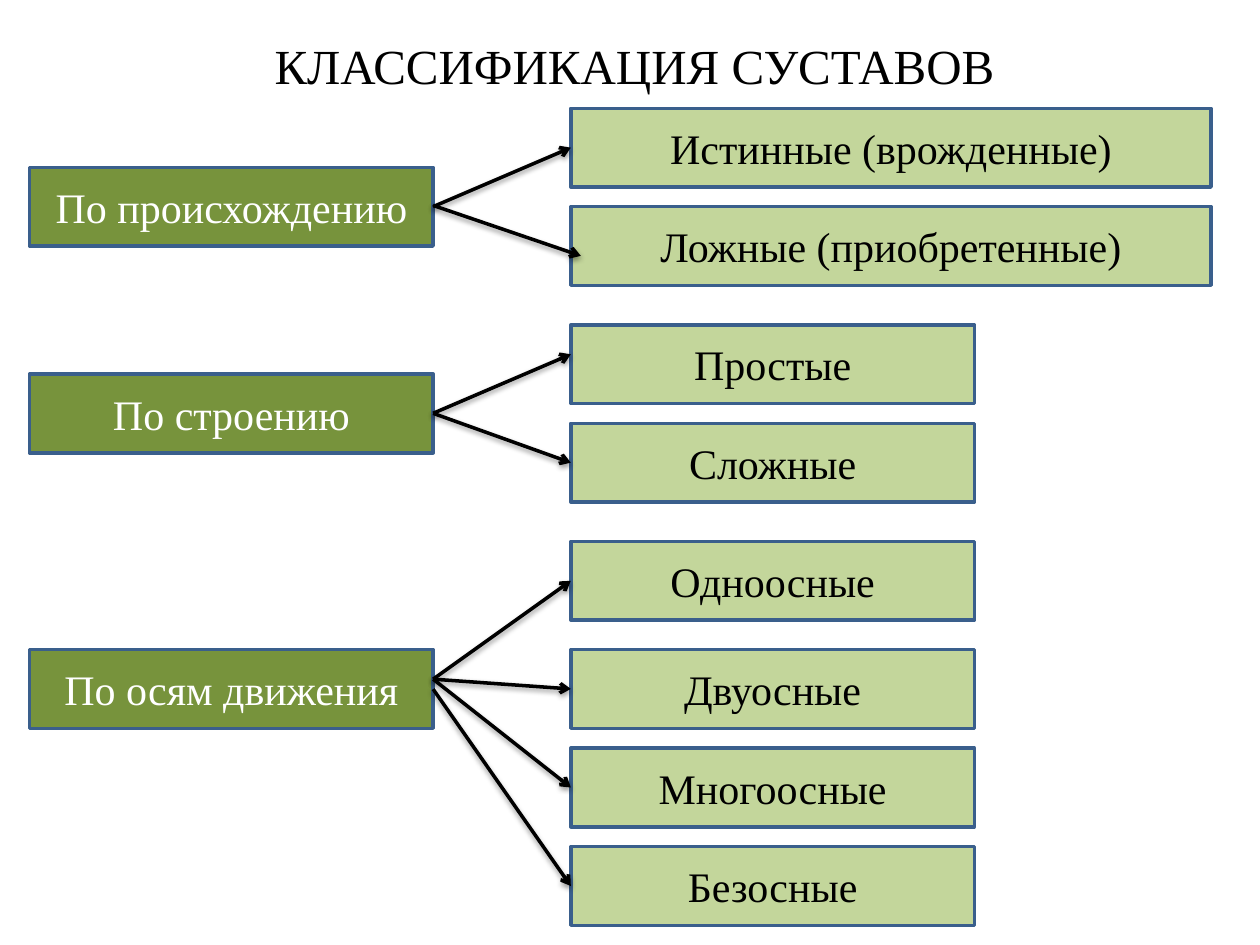
from lxml import etree
from pptx import Presentation
from pptx.dml.color import RGBColor
from pptx.enum.shapes import MSO_CONNECTOR, MSO_SHAPE
from pptx.enum.text import MSO_ANCHOR, MSO_AUTO_SIZE, PP_ALIGN
from pptx.oxml.ns import qn
from pptx.util import Pt

RECT, LINE = MSO_SHAPE.RECTANGLE, MSO_CONNECTOR.STRAIGHT
TOP, MIDDLE = MSO_ANCHOR.TOP, MSO_ANCHOR.MIDDLE
CENTER, GROW = PP_ALIGN.CENTER, MSO_AUTO_SIZE.SHAPE_TO_FIT_TEXT
COLORS = {"olive": "77933C", "lime": "C3D69B", "edge": "3A5F8C",
          "black": "000000", "white": "FFFFFF"}
FONT = "Times New Roman"
LEFT, RIGHT, WIDE, HIGH = 16.9, 326.2, 230.6, 45
START, MID = 247.5, 22.5

# Each group: label, top, kind width, kinds as (text, top, start y, end x shift, end y shift)
GROUPS = [
    ("По происхождению", 95.6, 365.8, [
        ("Истинные (врожденные)", 61.9, 118.1, 0, 0),
        ("Ложные (приобретенные)", 118.1, 117.4, 5.7, 5.6)]),
    ("По строению", 213.8, WIDE, [
        ("Простые", 185.6, 236.2, 0, -5.6),
        ("Сложные", 241.9, 236.2, 0, 0)]),
    ("По осям движения", 371.2, WIDE, [
        ("Одноосные", 309.4, 388.1, 0, 0),
        ("Двуосные", 371.2, 388.1, 0, 0),
        ("Многоосные", 427.5, 388.1, 0, 0),
        ("Безосные", 483.8, 393.8, 0, 0)]),
]


def rgb(name):
    """Return the named colour."""
    return RGBColor.from_string(COLORS[name])


def apply(item, values):
    """Set attributes from a dict of format values."""
    for name, value in values.items():
        setattr(item, name, value)


def place(shape, left, top, width, height):
    """Move and size a shape in points."""
    apply(shape, {"left": Pt(left), "top": Pt(top),
                  "width": Pt(width), "height": Pt(height)})


def write(shape, text, size, color, frame):
    """Write one centred line of text."""
    apply(shape.text_frame, {"word_wrap": True, **frame})
    para = shape.text_frame.paragraphs[0]
    para.alignment = CENTER
    run = para.add_run()
    run.text = text
    apply(run.font, {"name": FONT, "size": Pt(size)})
    run.font.color.rgb = rgb(color)


def add_title(slide, text):
    """Fill the title placeholder."""
    title = slide.shapes.title
    place(title, 22.3, 16.6, 680.4, 41)
    write(title, text, 28, "black", {"vertical_anchor": TOP, "auto_size": GROW})


def add_box(slide, text, left, top, width, fill, color):
    """Add a framed box with text."""
    box = slide.shapes.add_shape(RECT, Pt(left), Pt(top), Pt(width), Pt(HIGH))
    box.shadow.inherit = False
    box.fill.solid()
    box.fill.fore_color.rgb = rgb(fill)
    box.line.width = Pt(2)
    box.line.color.rgb = rgb("edge")
    write(box, text, 24, color, {"vertical_anchor": MIDDLE})


def add_arrow(slide, start, end):
    """Add an arrow with a soft shadow."""
    arrow = slide.shapes.add_connector(LINE, *map(Pt, start + end))
    arrow.line.width = Pt(2)
    arrow.line.color.rgb = rgb("black")
    props = arrow._element.spPr
    etree.SubElement(props.find(qn("a:ln")), qn("a:tailEnd"), type="arrow")
    effects = etree.SubElement(props, qn("a:effectLst"))
    shadow = etree.SubElement(
        effects, qn("a:outerShdw"), blurRad=str(Pt(3.1)), dist=str(Pt(1.6)),
        dir="5400000", rotWithShape="0")
    tint = etree.SubElement(shadow, qn("a:srgbClr"), val=COLORS["black"])
    etree.SubElement(tint, qn("a:alpha"), val="38000")


def main():
    """Build the slide and save it."""
    deck = Presentation()
    apply(deck, {"slide_width": Pt(720), "slide_height": Pt(540)})
    slide = deck.slides.add_slide(deck.slide_layouts[5])
    add_title(slide, "КЛАССИФИКАЦИЯ СУСТАВОВ")
    for label, top, width, kinds in GROUPS:
        add_box(slide, label, LEFT, top, WIDE, "olive", "white")
        for text, level, start, across, down in kinds:
            add_box(slide, text, RIGHT, level, width, "lime", "black")
            add_arrow(slide, (START, start),
                      (RIGHT + across, level + MID + down))
    deck.save("out.pptx")


main()
